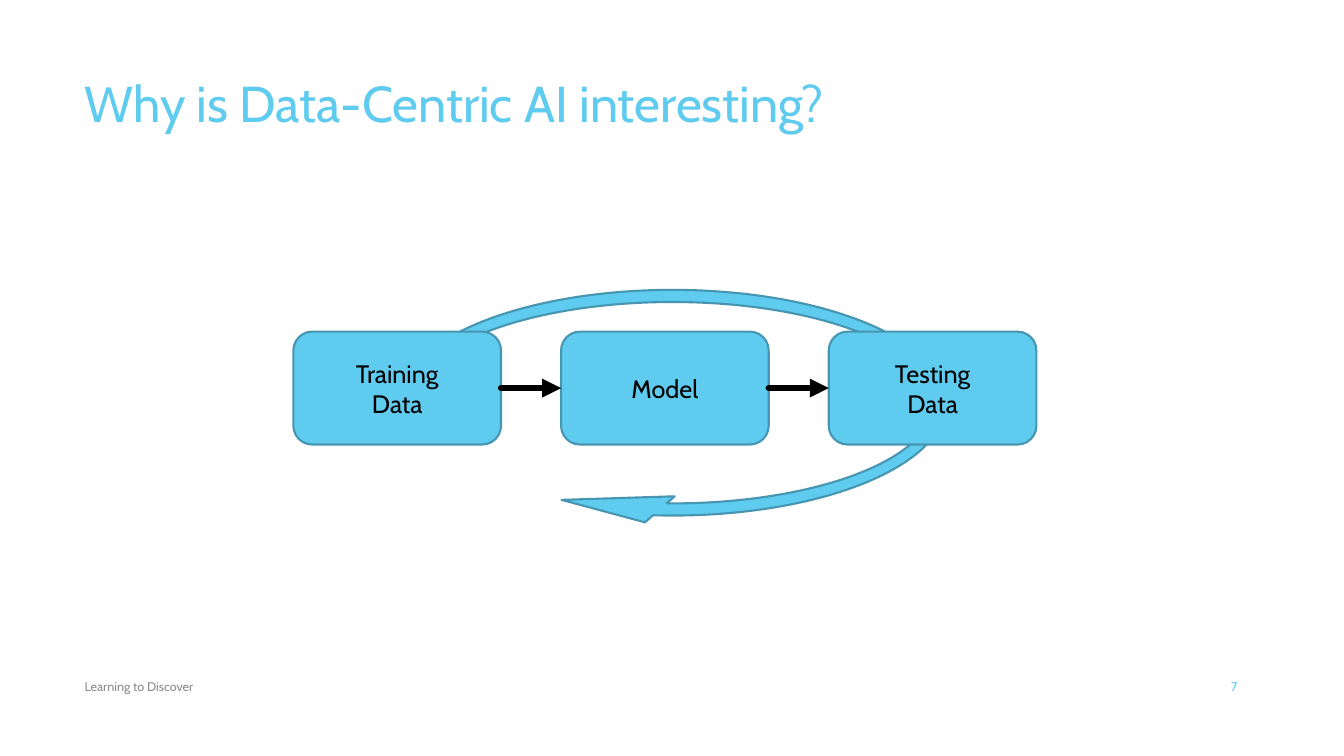
from dataclasses import dataclass

from lxml.etree import SubElement
from pptx import Presentation
from pptx.dml.color import RGBColor as RGB
from pptx.enum.shapes import MSO_CONNECTOR as Link, MSO_SHAPE as Form
from pptx.enum.text import MSO_ANCHOR as Anchor, PP_ALIGN as Align
from pptx.oxml.ns import qn
from pptx.shapes.autoshape import Shape
from pptx.slide import Slide
from pptx.util import Inches, Pt


@dataclass(frozen=True)
class Theme:
    font: str = "Cabin"
    sky: RGB = RGB(0x5F, 0xCB, 0xEF)
    edge: RGB = RGB(0x46, 0x96, 0xB1)
    ink: RGB = RGB(0, 0, 0)
    gray: RGB = RGB(0x8C, 0x8C, 0x8C)
    title: int = 36
    body: int = 18
    small: int = 9
    rim: float = 1.5
    arrow: float = 4.5


@dataclass(frozen=True)
class Rect:
    left: float
    top: float
    width: float
    height: float

    def place(self) -> tuple[int, ...]:
        return tuple(map(Inches, (self.left, self.top, self.width, self.height)))


@dataclass(frozen=True)
class Label:
    text: str
    rect: Rect
    size: int
    color: RGB
    align: Align = Align.LEFT
    anchor: Anchor = Anchor.MIDDLE


THEME = Theme()
LABELS = [
    Label("Learning to Discover", Rect(0.74, 6.61, 6.89, 0.4), THEME.small, THEME.gray),
    Label("7", Rect(11.62, 6.61, 0.75, 0.4), THEME.small, THEME.sky, align=Align.RIGHT),
    Label("Why is Data-Centric AI interesting?", Rect(0.74, 0.67, 9.4, 1.12),
          THEME.title, THEME.sky, anchor=Anchor.TOP),
]
STAGES = ["Training\nData", "Model", "Testing\nData"]
FIRST, LAST = 2.91, 8.22
PITCH = (LAST - FIRST) / (len(STAGES) - 1)
TOP, WIDTH, HEIGHT = 3.29, 2.06, 1.12


def write(shape: Shape, text: str, *, size: int, color: RGB,
          align: Align, anchor: Anchor) -> None:
    frame = shape.text_frame
    frame.word_wrap = True
    frame.vertical_anchor = anchor
    frame.text = text
    for para in frame.paragraphs:
        para.alignment = align
        font = para.runs[0].font
        font.name, font.size = THEME.font, Pt(size)
        font.color.rgb = color


def add_form(slide: Slide, form: Form, rect: Rect) -> Shape:
    shape = slide.shapes.add_shape(form, *rect.place())
    shape.shadow.inherit = False
    shape.fill.solid()
    shape.fill.fore_color.rgb = THEME.sky
    shape.line.color.rgb = THEME.edge
    shape.line.width = Pt(THEME.rim)
    return shape


def add_loop(slide: Slide) -> None:
    """Draw the feedback arrow; sizes are in percent, angles in degrees."""
    loop = add_form(slide, Form.CIRCULAR_ARROW, Rect(3.82, 2.74, 5.7, 2.51))
    band, head = 4.8, 7.8
    tip, end, start = (angle * 0.6 for angle in (42, 96.75, 174.4))
    for i, value in enumerate((band / 100, tip, end, start, head / 100)):
        loop.adjustments[i] = value


def add_label(slide: Slide, label: Label) -> None:
    box = slide.shapes.add_textbox(*label.rect.place())
    write(box, label.text, size=label.size, color=label.color,
          align=label.align, anchor=label.anchor)


def add_stage(slide: Slide, text: str, left: float) -> None:
    box = add_form(slide, Form.ROUNDED_RECTANGLE, Rect(left, TOP, WIDTH, HEIGHT))
    write(box, text, size=THEME.body, color=THEME.ink,
          align=Align.CENTER, anchor=Anchor.MIDDLE)


def add_arrow(slide: Slide, start: float, end: float) -> None:
    mid = Inches(TOP + HEIGHT / 2)
    arrow = slide.shapes.add_connector(Link.STRAIGHT, Inches(start), mid, Inches(end), mid)
    arrow.line.color.rgb = THEME.ink
    arrow.line.width = Pt(THEME.arrow)
    line = arrow.line._get_or_add_ln()
    line.set("cap", "rnd")
    SubElement(line, qn("a:tailEnd"), type="triangle")
    SubElement(arrow._element.spPr, qn("a:effectLst"))


def main() -> None:
    deck = Presentation()
    deck.slide_width, deck.slide_height = Inches(13.33), Inches(7.5)
    slide = deck.slides.add_slide(deck.slide_layouts[6])
    add_loop(slide)
    for label in LABELS:
        add_label(slide, label)
    lefts = [FIRST + i * PITCH for i in range(len(STAGES))]
    for text, left in zip(STAGES, lefts):
        add_stage(slide, text, left)
    for left, right in zip(lefts, lefts[1:]):
        add_arrow(slide, left + WIDTH, right)
    deck.save("out.pptx")


if __name__ == "__main__":
    main()
